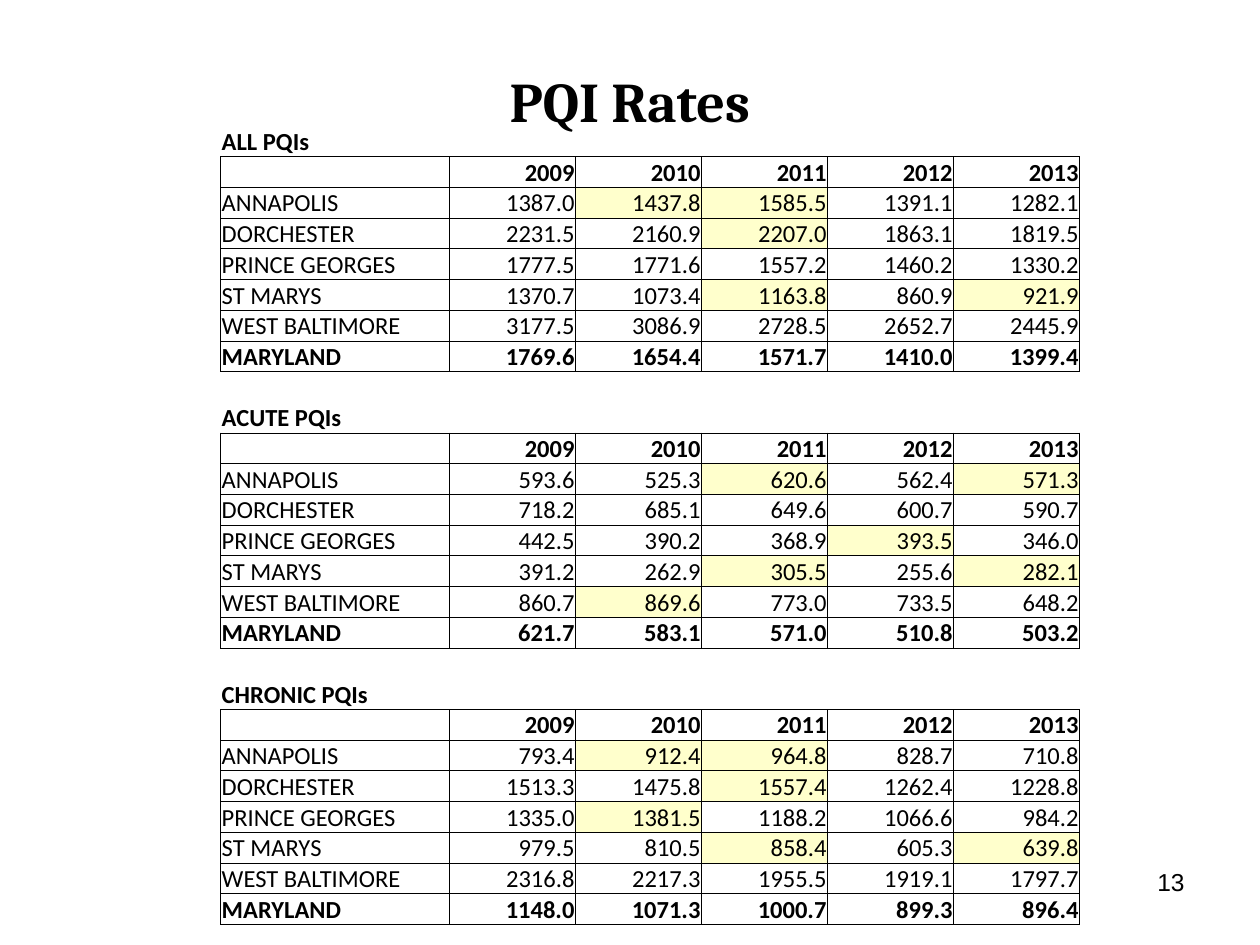
from lxml.etree import SubElement
from pptx import Presentation
from pptx.dml.color import RGBColor as Rgb
from pptx.enum.text import MSO_ANCHOR as Anchor, PP_ALIGN as Align
from pptx.oxml.ns import qn
from pptx.util import Inches, Pt

COLORS = {"ink": "000000", "rise": "FFFFCC"}
YEARS = ["2009", "2010", "2011", "2012", "2013"]
REGIONS = ["ANNAPOLIS", "DORCHESTER", "PRINCE GEORGES", "ST MARYS", "WEST BALTIMORE", "MARYLAND"]
RATES = {
    "ALL PQIs": """1387.0 1437.8 1585.5 1391.1 1282.1
        2231.5 2160.9 2207.0 1863.1 1819.5
        1777.5 1771.6 1557.2 1460.2 1330.2
        1370.7 1073.4 1163.8 860.9 921.9
        3177.5 3086.9 2728.5 2652.7 2445.9
        1769.6 1654.4 1571.7 1410.0 1399.4""",
    "ACUTE PQIs": """593.6 525.3 620.6 562.4 571.3
        718.2 685.1 649.6 600.7 590.7
        442.5 390.2 368.9 393.5 346.0
        391.2 262.9 305.5 255.6 282.1
        860.7 869.6 773.0 733.5 648.2
        621.7 583.1 571.0 510.8 503.2""",
    "CHRONIC PQIs": """793.4 912.4 964.8 828.7 710.8
        1513.3 1475.8 1557.4 1262.4 1228.8
        1335.0 1381.5 1188.2 1066.6 984.2
        979.5 810.5 858.4 605.3 639.8
        2316.8 2217.3 1955.5 1919.1 1797.7
        1148.0 1071.3 1000.7 899.3 896.4""",
}


def apply(target, values):
    for name, value in values.items():
        setattr(target, name, value)


def rate_rows():
    rows = []
    for group, figures in RATES.items():
        if rows:
            rows.append(("gap", [""] * 6))
        rows.append(("label", [group] + [""] * 5))
        rows.append(("head", [""] + YEARS))
        for region, line in zip(REGIONS, figures.splitlines()):
            kind = "total" if region == "MARYLAND" else "data"
            rows.append((kind, [region] + line.split()))
    return rows


class RateSlide:
    CELL = {"margin_left": Inches(0.01), "margin_right": Inches(0.01),
            "margin_top": Inches(0.01), "margin_bottom": 0,
            "vertical_anchor": Anchor.BOTTOM}
    EDGES = {"gap": ["lnT"], "label": ["lnB"]}
    ALL_EDGES = ["lnL", "lnR", "lnT", "lnB"]

    def __init__(self, deck):
        self.slide = deck.slides.add_slide(deck.slide_layouts[6])

    def wording(self, paragraph, text, face, size, bold, align):
        paragraph.alignment = align
        if text:
            run = paragraph.add_run()
            run.text = text
            apply(run.font, {"name": face, "size": Pt(size), "bold": bold})
            run.font.color.rgb = Rgb.from_string(COLORS["ink"])
        else:
            paragraph._p.get_or_add_endParaRPr().set("sz", str(size * 100))

    def text(self, box, text, face, size, bold, align, anchor):
        frame = self.slide.shapes.add_textbox(*map(Inches, box)).text_frame
        apply(frame, {"word_wrap": True, "vertical_anchor": anchor})
        self.wording(frame.paragraphs[0], text, face, size, bold, align)

    def borders(self, cell, drawn):
        properties = cell._tc.get_or_add_tcPr()
        for edge in self.ALL_EDGES:
            line = SubElement(properties, qn(f"a:{edge}"), w=str(Pt(0.5)))
            if edge in drawn:
                fill = SubElement(line, qn("a:solidFill"))
                SubElement(fill, qn("a:srgbClr"), val=COLORS["ink"])
            else:
                SubElement(line, qn("a:noFill"))

    def table(self, box, label_width, year_width, rows):
        grid = self.slide.shapes.add_table(len(rows), 6, *map(Inches, box)).table
        apply(grid, {"first_row": False, "horz_banding": False})
        for index, column in enumerate(grid.columns):
            column.width = Inches(year_width if index else label_width)
        for row, (kind, texts) in enumerate(rows):
            for col, text in enumerate(texts):
                cell = grid.cell(row, col)
                apply(cell, self.CELL)
                self.borders(cell, self.EDGES.get(kind, self.ALL_EDGES))
                rising = kind == "data" and col > 1 and float(text) > float(texts[col - 1])
                if rising:
                    cell.fill.solid()
                    cell.fill.fore_color.rgb = Rgb.from_string(COLORS["rise"])
                else:
                    cell.fill.background()
                self.wording(cell.text_frame.paragraphs[0], text, "Calibri", 14,
                             kind != "data", Align.RIGHT if col else Align.LEFT)


def main():
    deck = Presentation()
    apply(deck, {"slide_width": Inches(10), "slide_height": Inches(7.5)})
    page = RateSlide(deck)
    page.text((0.5, 0.17, 9, 1.25), "PQI Rates", "Cambria", 32, True, Align.CENTER, Anchor.MIDDLE)
    page.text((7.17, 6.83, 2.33, 0.52), "13", "Arial", 14, False, Align.RIGHT, Anchor.TOP)
    page.table((1.75, 1, 6.83, 6.27), 1.82, 1, rate_rows())
    deck.save("out.pptx")


if __name__ == "__main__":
    main()
